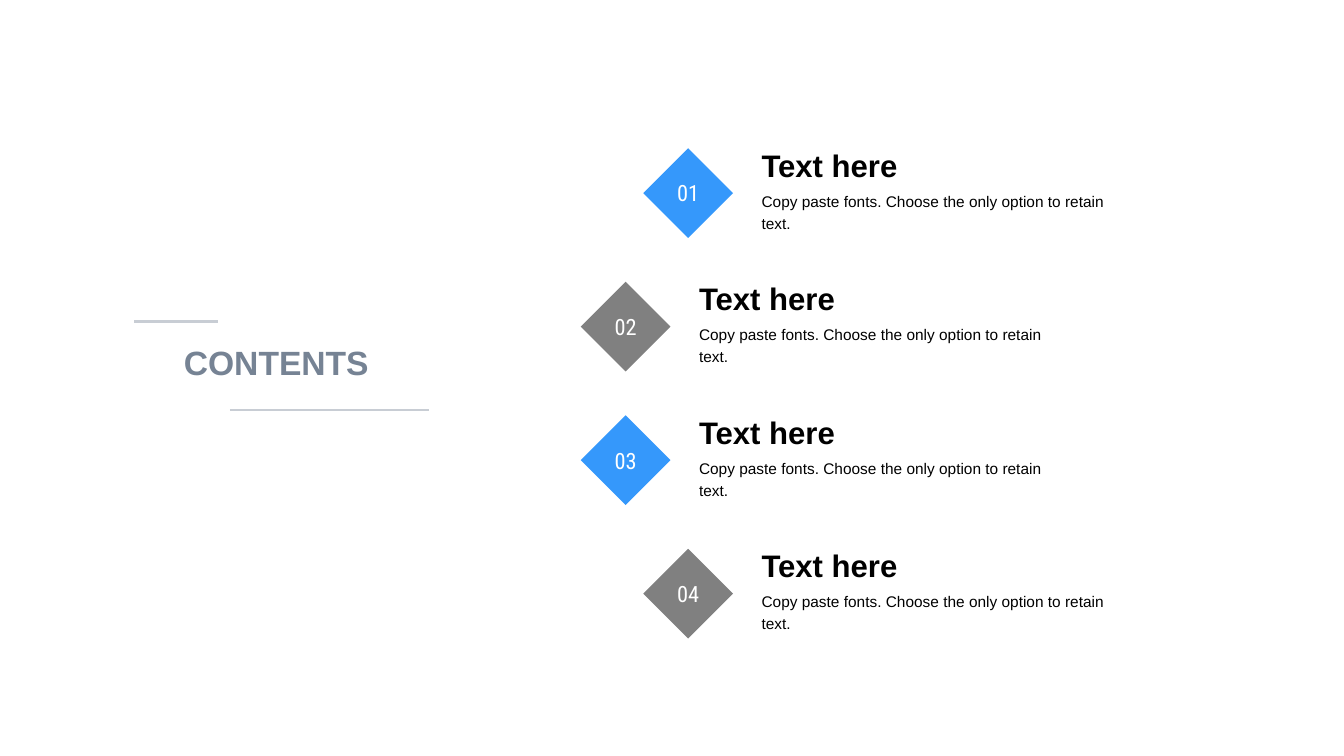
from lxml import etree
from pptx import Presentation
from pptx.dml.color import RGBColor
from pptx.enum.shapes import MSO_CONNECTOR, MSO_SHAPE
from pptx.enum.text import MSO_ANCHOR, PP_ALIGN
from pptx.oxml.ns import qn
from pptx.util import Inches, Pt

STRAIGHT = MSO_CONNECTOR.STRAIGHT
DIAMOND = MSO_SHAPE.DIAMOND
TOP, MIDDLE, BOTTOM = MSO_ANCHOR.TOP, MSO_ANCHOR.MIDDLE, MSO_ANCHOR.BOTTOM
LEFT, CENTER = PP_ALIGN.LEFT, PP_ALIGN.CENTER

COLORS = {
    "blue": "3598FB",
    "gray": "808080",
    "slate": "768394",
    "rule": "C8CDD4",
    "black": "000000",
    "white": "FFFFFF",
}
HEADING = "Text here"
DETAIL = "Copy paste fonts. Choose the only option to retain text."
FIRST_TOP = 1.47
ITEM_STEP = 1.325
DIAMOND_SIZE = 0.89
TEXT_OFFSET = 1.075
TEXT_WIDTH = 3.9
HEADING_HEIGHT = 0.4
ITEMS = [(6.38, "blue"), (5.76, "gray"), (5.76, "blue"), (6.38, "gray")]


def color(name):
    return RGBColor.from_string(COLORS[name])


def write_text(shape, text, size, ink, font="Arial", bold=False,
               align=LEFT, anchor=TOP, line_spacing=None):
    frame = shape.text_frame
    frame.word_wrap = True
    frame.vertical_anchor = anchor
    para = frame.paragraphs[0]
    para.alignment = align
    para.line_spacing = line_spacing
    span = para.add_run()
    span.text = text
    span.font.name = font
    span.font.size = Pt(size)
    span.font.bold = bold
    span.font.color.rgb = color(ink)


def add_text(page, left, top, width, height, text, **text_format):
    box = page.shapes.add_textbox(
        Inches(left), Inches(top), Inches(width), Inches(height))
    write_text(box, text, **text_format)


def add_diamond(page, left, top, label, fill):
    diamond = page.shapes.add_shape(
        DIAMOND, Inches(left), Inches(top),
        Inches(DIAMOND_SIZE), Inches(DIAMOND_SIZE))
    diamond.shadow.inherit = False
    diamond.fill.solid()
    diamond.fill.fore_color.rgb = color(fill)
    diamond.line.fill.background()
    frame = diamond.text_frame
    frame.margin_left = frame.margin_right = Inches(0)
    write_text(diamond, label, size=16, ink="white",
               font="Roboto Condensed", align=CENTER, anchor=MIDDLE)


def add_rule(page, start, end, top):
    rule = page.shapes.add_connector(
        STRAIGHT, Inches(start), Inches(top), Inches(end), Inches(top))
    rule.line.color.rgb = color("rule")
    rule.line.width = Pt(1.75)
    etree.SubElement(rule._element.spPr, qn("a:effectLst"))


def add_item(page, number, left, fill):
    top = FIRST_TOP + (number - 1) * ITEM_STEP
    text_left = left + TEXT_OFFSET
    add_diamond(page, left, top, f"{number:02}", fill)
    add_text(page, text_left, top, TEXT_WIDTH, HEADING_HEIGHT, HEADING,
             size=22.2, ink="black", bold=True, anchor=BOTTOM)
    add_text(page, text_left, top + HEADING_HEIGHT, TEXT_WIDTH, 0.43, DETAIL,
             size=11, ink="black", anchor=MIDDLE, line_spacing=1.2)


def main():
    deck = Presentation()
    deck.slide_width = Inches(13.33)
    deck.slide_height = Inches(7.5)
    page = deck.slides.add_slide(deck.slide_layouts[6])
    for number, (left, fill) in enumerate(ITEMS, start=1):
        add_item(page, number, left, fill)
    add_text(page, 1.65, 3.34, 2.18, 0.58, "CONTENTS",
             size=24, ink="slate", bold=True, align=CENTER)
    add_rule(page, 2.16, 1.33, 3.19)
    add_rule(page, 2.28, 4.25, 4.07)
    deck.save("out.pptx")


if __name__ == "__main__":
    main()
